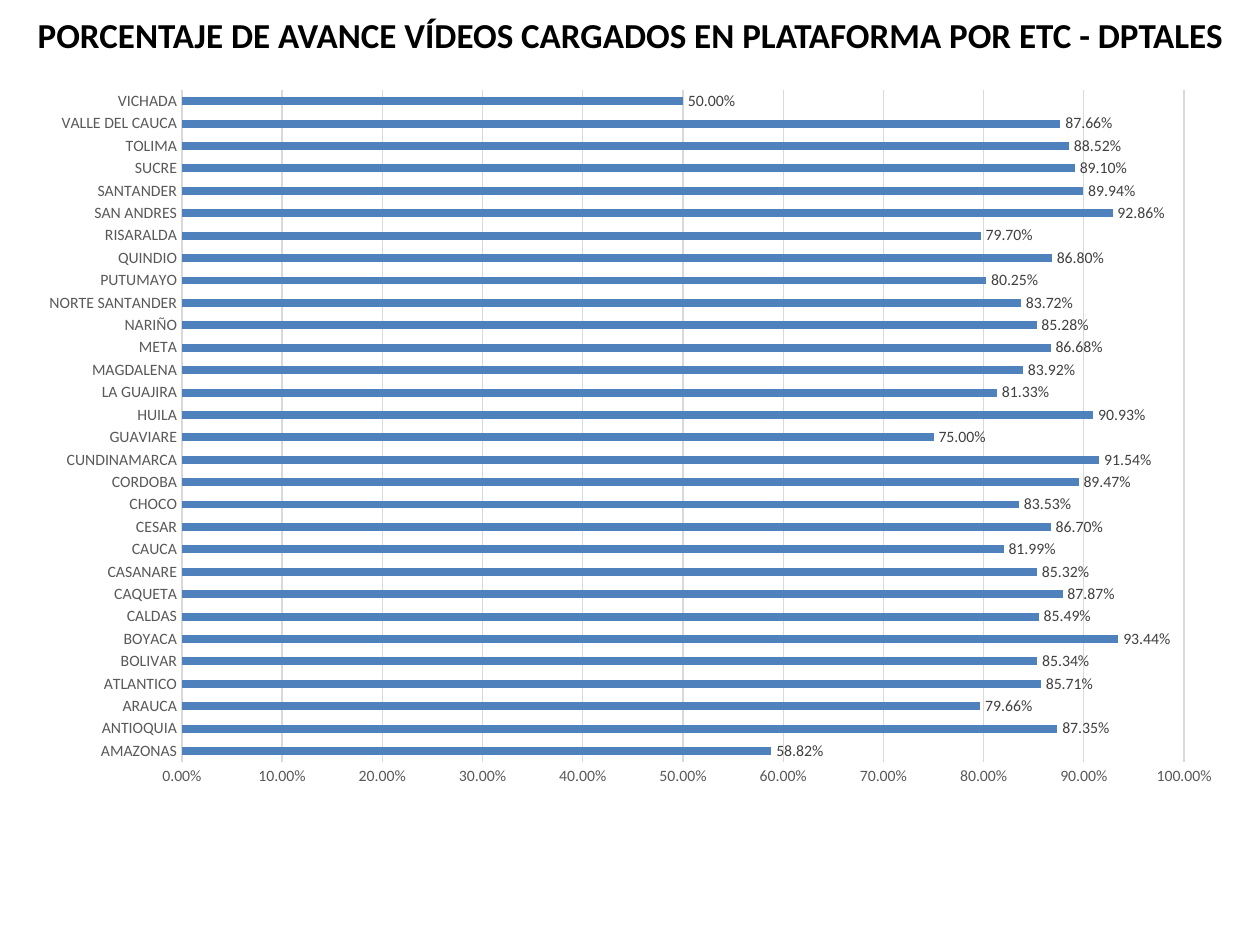
"""Build a slide with a bar chart of video upload progress by department."""
from typing import NamedTuple

from pptx import Presentation
from pptx.chart.chart import Chart
from pptx.chart.data import CategoryChartData
from pptx.dml.color import RGBColor
from pptx.enum.chart import XL_CHART_TYPE, XL_LABEL_POSITION, XL_TICK_MARK
from pptx.enum.text import MSO_ANCHOR, MSO_AUTO_SIZE, PP_ALIGN
from pptx.slide import Slide
from pptx.text.text import Font
from pptx.util import Inches, Pt

BLACK = RGBColor(0x00, 0x00, 0x00)
WHITE = RGBColor(0xFF, 0xFF, 0xFF)
BLUE = RGBColor(0x4F, 0x81, 0xBD)
AXIS_GRAY = RGBColor(0x59, 0x59, 0x59)
LABEL_GRAY = RGBColor(0x40, 0x40, 0x40)
GRID_GRAY = RGBColor(0xD9, 0xD9, 0xD9)
FONT_NAME = "Calibri"
PERCENT_FORMAT = "0.00%"


class Department(NamedTuple):
    name: str
    progress: float


DEPARTMENTS = [
    Department("AMAZONAS", 0.5882),
    Department("ANTIOQUIA", 0.8735),
    Department("ARAUCA", 0.7966),
    Department("ATLANTICO", 0.8571),
    Department("BOLIVAR", 0.8534),
    Department("BOYACA", 0.9344),
    Department("CALDAS", 0.8549),
    Department("CAQUETA", 0.8787),
    Department("CASANARE", 0.8532),
    Department("CAUCA", 0.8199),
    Department("CESAR", 0.867),
    Department("CHOCO", 0.8353),
    Department("CORDOBA", 0.8947),
    Department("CUNDINAMARCA", 0.9154),
    Department("GUAVIARE", 0.75),
    Department("HUILA", 0.9093),
    Department("LA GUAJIRA", 0.8133),
    Department("MAGDALENA", 0.8392),
    Department("META", 0.8668),
    Department("NARIÑO", 0.8528),
    Department("NORTE SANTANDER", 0.8372),
    Department("PUTUMAYO", 0.8025),
    Department("QUINDIO", 0.868),
    Department("RISARALDA", 0.797),
    Department("SAN ANDRES", 0.9286),
    Department("SANTANDER", 0.8994),
    Department("SUCRE", 0.891),
    Department("TOLIMA", 0.8852),
    Department("VALLE DEL CAUCA", 0.8766),
    Department("VICHADA", 0.5),
]


def format_font(font: Font, *, size: float, color: RGBColor, bold: bool = False) -> None:
    """Set the face, size, colour and weight of a font."""
    font.name = FONT_NAME
    font.size = Pt(size)
    font.bold = bold
    font.color.rgb = color


def set_title(slide: Slide, text: str, *, size: float, color: RGBColor) -> None:
    """Place and format the slide title."""
    title = slide.shapes.title
    title.left, title.top = Inches(0.01), Inches(0.08)
    title.width, title.height = Inches(9.99), Inches(0.39)
    title.fill.solid()
    title.fill.fore_color.rgb = WHITE
    frame = title.text_frame
    frame.text = text
    frame.word_wrap = True
    frame.auto_size = MSO_AUTO_SIZE.NONE
    frame.vertical_anchor = MSO_ANCHOR.MIDDLE
    paragraph = frame.paragraphs[0]
    paragraph.alignment = PP_ALIGN.CENTER
    format_font(paragraph.runs[0].font, size=size, color=color, bold=True)


def add_progress_chart(slide: Slide, departments: list[Department]) -> Chart:
    """Add the bar chart with one labelled bar per department."""
    data = CategoryChartData(number_format=PERCENT_FORMAT)
    data.categories = [department.name for department in departments]
    data.add_series("Series 1", [department.progress for department in departments])
    chart = slide.shapes.add_chart(
        XL_CHART_TYPE.BAR_CLUSTERED,
        Inches(0.2), Inches(0.6), Inches(9.61), Inches(5.75), data,
    ).chart
    chart.has_title = False
    chart.has_legend = False
    format_font(chart.font, size=10, color=BLACK)

    plot = chart.plots[0]
    plot.gap_width = 182
    plot.vary_by_categories = False
    series = plot.series[0]
    series.format.fill.solid()
    series.format.fill.fore_color.rgb = BLUE
    labels = series.data_labels
    labels.show_value = True
    labels.position = XL_LABEL_POSITION.OUTSIDE_END
    labels.number_format = PERCENT_FORMAT
    labels.number_format_is_linked = False
    format_font(labels.font, size=9, color=LABEL_GRAY)
    return chart


def format_axes(chart: Chart) -> None:
    """Style both axes and the vertical gridlines."""
    category_axis, value_axis = chart.category_axis, chart.value_axis
    for axis in (category_axis, value_axis):
        axis.major_tick_mark = XL_TICK_MARK.NONE
        axis.minor_tick_mark = XL_TICK_MARK.NONE
        format_font(axis.tick_labels.font, size=9, color=AXIS_GRAY)
    value_axis.minimum_scale = 0
    value_axis.maximum_scale = 1
    value_axis.major_unit = 0.1
    value_axis.has_major_gridlines = True
    value_axis.tick_labels.number_format = PERCENT_FORMAT
    value_axis.tick_labels.number_format_is_linked = False
    value_axis.format.line.fill.background()
    for line in (category_axis.format.line, value_axis.major_gridlines.format.line):
        line.color.rgb = GRID_GRAY
        line.width = Pt(0.75)


def main() -> None:
    """Create and save the presentation."""
    presentation = Presentation()
    presentation.slide_width = Inches(10)
    presentation.slide_height = Inches(7.5)
    slide = presentation.slides.add_slide(presentation.slide_layouts[5])
    set_title(
        slide,
        "PORCENTAJE DE AVANCE VÍDEOS CARGADOS EN PLATAFORMA POR ETC - DPTALES",
        size=20,
        color=BLACK,
    )
    format_axes(add_progress_chart(slide, DEPARTMENTS))
    presentation.save("out.pptx")


if __name__ == "__main__":
    main()
